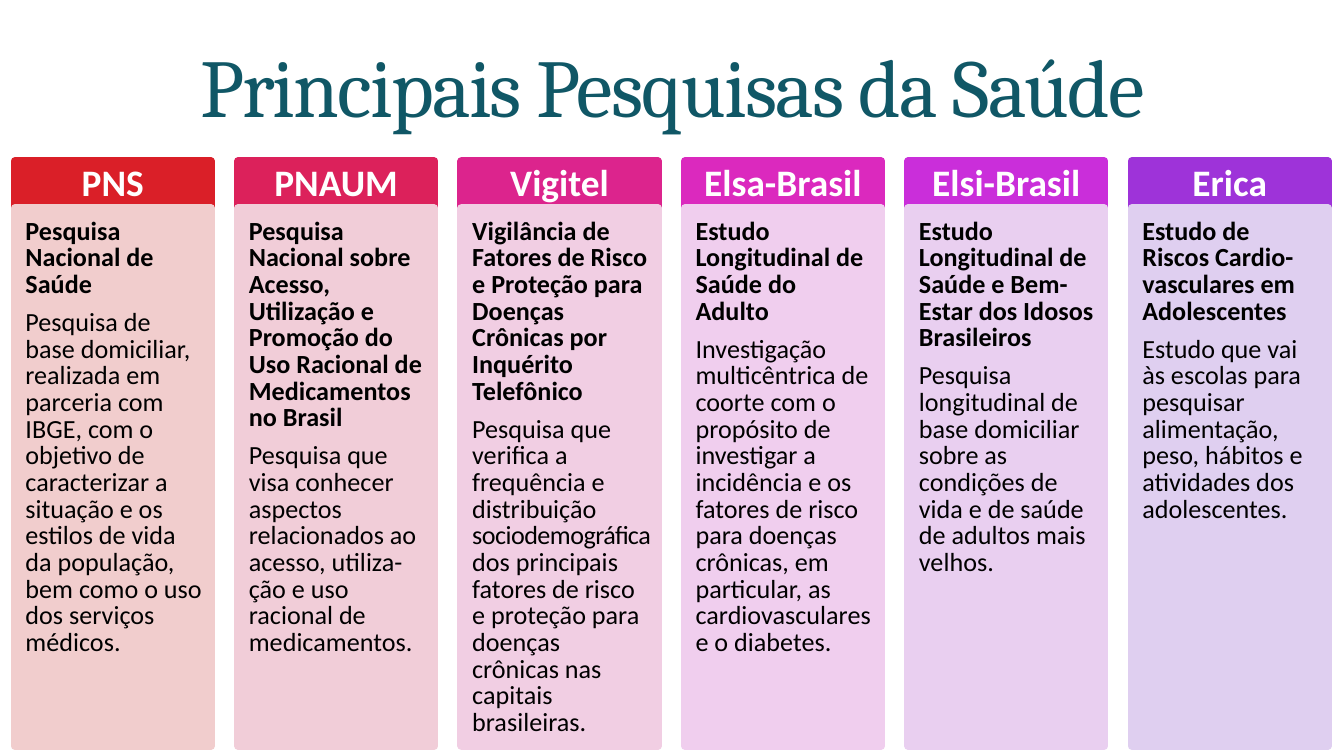
from lxml import etree
from pptx import Presentation
from pptx.dml.color import RGBColor
from pptx.enum.shapes import MSO_SHAPE
from pptx.enum.text import MSO_ANCHOR, PP_ALIGN
from pptx.oxml.ns import qn
from pptx.util import Inches, Pt

RECTANGLE = MSO_SHAPE.RECTANGLE
CENTER, LEFT = PP_ALIGN.CENTER, PP_ALIGN.LEFT
MIDDLE, TOP = MSO_ANCHOR.MIDDLE, MSO_ANCHOR.TOP

# Content: name, header colour, panel colour, full title, description
TITLE = "Principais Pesquisas da Saúde"
SURVEYS = [
    ("PNS", "DA1F28", "F1CDCD", "Pesquisa Nacional de Saúde",
     "Pesquisa de base domiciliar,\nrealizada em parceria com IBGE, com o objetivo de "
     "caracterizar a situação e os estilos de vida da população,\n"
     "bem como o uso dos serviços médicos."),
    ("PNAUM", "DC215B", "F1CDD8",
     "Pesquisa Nacional sobre Acesso, Utilização e Promoção do Uso Racional de "
     "Medicamentos no Brasil",
     "Pesquisa que visa conhecer aspectos relacionados ao acesso, utiliza-ção e uso "
     "racional de medicamentos."),
    ("Vigitel", "DC248D", "F1CEE3",
     "Vigilância de Fatores de Risco e Proteção para Doenças Crônicas por Inquérito "
     "Telefônico",
     "Pesquisa que verifica a frequência e distribuição sociodemográfica dos principais "
     "fatores de risco e proteção para doenças crônicas nas capitais brasileiras."),
    ("Elsa-Brasil", "DB29BE", "F0CEEE", "Estudo Longitudinal de Saúde do Adulto",
     "Investigação multicêntrica de coorte com o propósito de investigar a incidência e "
     "os fatores de risco para doenças crônicas, em particular, as cardiovasculares e o "
     "diabetes."),
    ("Elsi-Brasil", "CA2EDA", "E9CFF0",
     "Estudo Longitudinal de Saúde e Bem-Estar dos Idosos Brasileiros",
     "Pesquisa longitudinal de base domiciliar sobre as condições de vida e de saúde de "
     "adultos mais velhos."),
    ("Erica", "9E33D9", "DFCFF0",
     "Estudo de Riscos Cardio-vasculares em Adolescentes",
     "Estudo que vai às escolas para pesquisar alimentação,\npeso, hábitos e atividades "
     "dos adolescentes."),
]
TIGHT_WORD = "sociodemográfica"
COLORS = {"title": "105766", "header": "FFFFFF", "body": "000000"}

# Grid, in inches, on a 16:9 slide
WIDTH = 10
HEIGHT = WIDTH * 9 / 16
GRID_LEFT, GRID_RIGHT = 0.11, 9.88
COLUMN_WIDTH = 1.46
PITCH = (GRID_RIGHT - GRID_LEFT - COLUMN_WIDTH) / (len(SURVEYS) - 1)
HEADER_TOP, HEADER_HEIGHT, PANEL_HEIGHT = 1.2, 0.35, 4


def set_frame(shape, anchor, insets):
    frame = shape.text_frame
    frame.word_wrap = True
    frame.vertical_anchor = anchor
    (frame.margin_left, frame.margin_top,
     frame.margin_right, frame.margin_bottom) = map(Inches, insets)
    return frame


def format_paragraph(paragraph, size, font, color, align, line_spacing, bold=False):
    paragraph.alignment = align
    paragraph.line_spacing = line_spacing
    for run in paragraph.runs:
        run.font.size, run.font.name, run.font.bold = Pt(size), font, bold
        run.font.color.rgb = RGBColor.from_string(COLORS[color])


def set_tracking(run, points):
    run.font._element.set("spc", str(round(points * 100)))


def add_block(slide, left, top, height, color):
    shape = slide.shapes.add_shape(
        RECTANGLE, Inches(left), Inches(top), Inches(COLUMN_WIDTH), Inches(height))
    shape.shadow.inherit = False
    shape.line.width = Pt(4.33)
    for fill in (shape.fill, shape.line.fill):
        fill.solid()
        fill.fore_color.rgb = RGBColor.from_string(color)
    # Thick lines with round joins give the soft corners
    etree.SubElement(shape.line._get_or_add_ln(), qn("a:round"))
    return shape


presentation = Presentation()
presentation.slide_width, presentation.slide_height = Inches(WIDTH), Inches(HEIGHT)
slide = presentation.slides.add_slide(presentation.slide_layouts[6])

# Title
title = slide.shapes.add_textbox(Inches(0.2), Inches(0.23), Inches(9.61), Inches(0.94))
paragraph = set_frame(title, MIDDLE, (0.04, 0.04, 0.04, 0.04)).paragraphs[0]
paragraph.text = TITLE
format_paragraph(paragraph, 44, "Cambria", "title", CENTER, 0.8)
set_tracking(paragraph.runs[0], -1)

# One column per survey
for column, (name, strong, pale, full_title, description) in enumerate(SURVEYS):
    left = GRID_LEFT + column * PITCH

    header = add_block(slide, left, HEADER_TOP, HEADER_HEIGHT, strong)
    paragraph = set_frame(header, MIDDLE, (0.09, 0.05, 0.09, 0.05)).paragraphs[0]
    paragraph.text = name
    format_paragraph(paragraph, 20, "Calibri", "header", CENTER, 0.9, bold=True)

    panel = add_block(slide, left, HEADER_TOP + HEADER_HEIGHT, PANEL_HEIGHT, pale)
    frame = set_frame(panel, TOP, (0.08, 0.08, 0.05, 0.04))
    heading, body = frame.paragraphs[0], frame.add_paragraph()
    heading.text = full_title
    if TIGHT_WORD in description:
        for part in description.partition(TIGHT_WORD):
            run = body.add_run()
            run.text = part
            if part == TIGHT_WORD:
                set_tracking(run, -0.3)
    else:
        body.text = description.replace("\n", "\v")
    for paragraph in (heading, body):
        format_paragraph(paragraph, 14, "Calibri", "body", LEFT, 0.85,
                         bold=paragraph is heading)
        paragraph.space_after = Pt(6)

presentation.save("out.pptx")
